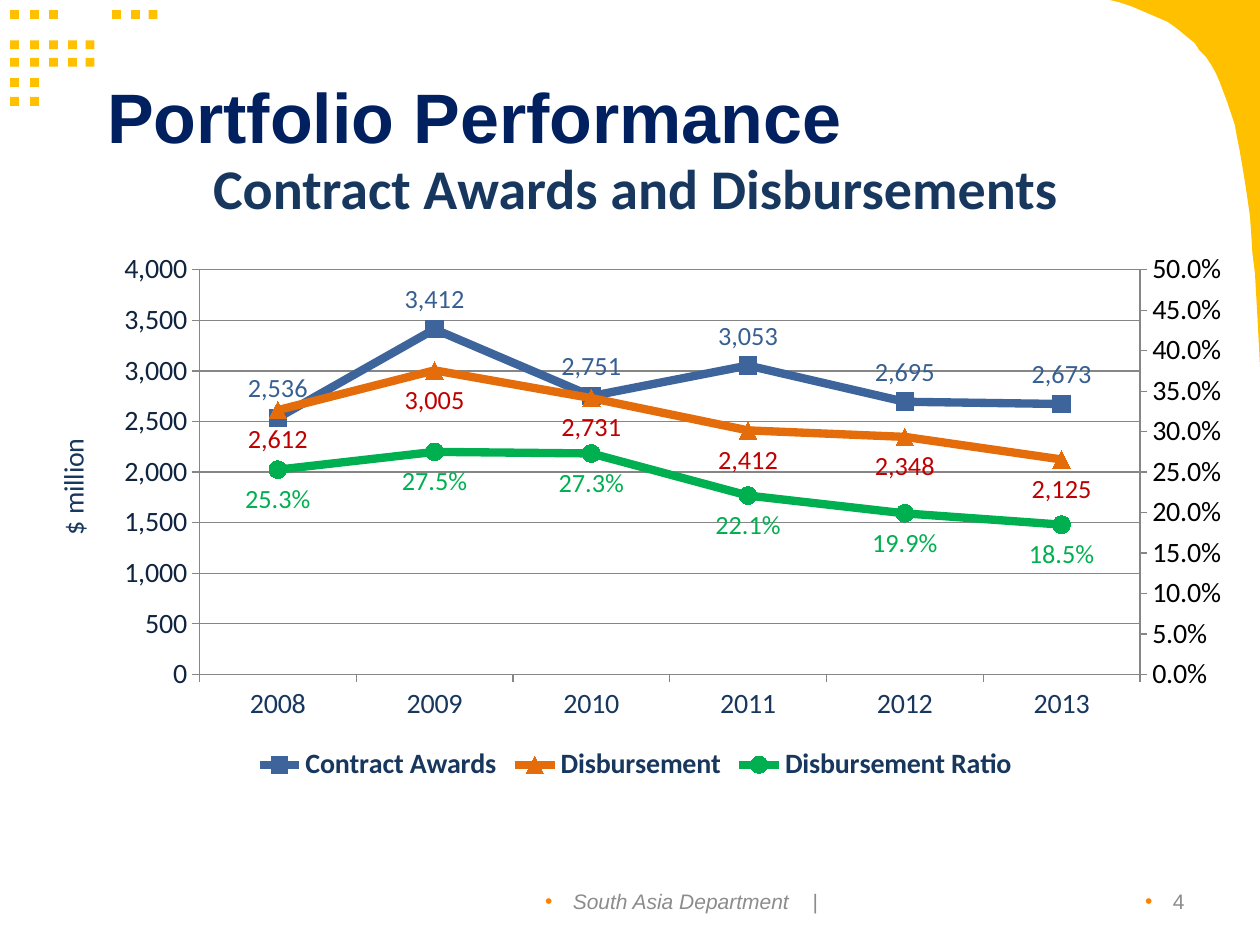
from copy import deepcopy

from pptx import Presentation
from pptx.chart.axis import CategoryAxis, ValueAxis
from pptx.chart.data import CategoryChartData
from pptx.dml.color import RGBColor
from pptx.enum.chart import (XL_CHART_TYPE as Kind, XL_LABEL_POSITION as Pos,
                             XL_LEGEND_POSITION as Side, XL_MARKER_STYLE as Mark,
                             XL_TICK_MARK as Tick)
from pptx.enum.shapes import MSO_SHAPE as Shape
from pptx.enum.text import MSO_ANCHOR as Anchor, PP_ALIGN as Align
from pptx.oxml import parse_xml
from pptx.oxml.ns import nsdecls, qn
from pptx.util import Inches, Pt

GOLD, NAVY, GREY, LINE = "FFC000", "17375E", "8C8C8C", "868686"

DOT_COLS = [0.08, 0.24, 0.39, 0.54, 0.68, 0.89, 1.04, 1.18]
DOT_ROWS = {0.08: "xxx..xxx", 0.32: "xxxxx", 0.46: "xxxxx", 0.62: "xx", 0.77: "xx"}
# The last points of the curve run from the right edge up to the top edge
CURVE = [(1.19, 0), (1.19, 2.91), (1.18, 2.71), (1.17, 2.52), (1.16, 2.34),
         (1.15, 2.17), (1.13, 2.01), (1.12, 1.85), (1.11, 1.71), (1.09, 1.57),
         (1.07, 1.44), (1.05, 1.32), (1.03, 1.2), (1.01, 1.1), (0.99, 0.99),
         (0.96, 0.9), (0.93, 0.81), (0.9, 0.73), (0.87, 0.65), (0.84, 0.58),
         (0.8, 0.51), (0.76, 0.45), (0.71, 0.4), (0.67, 0.34), (0.62, 0.3),
         (0.56, 0.25), (0.51, 0.21), (0.45, 0.17), (0.38, 0.14), (0.31, 0.11),
         (0.24, 0.08), (0.17, 0.05), (0.08, 0.02)]

YEARS = ["2008", "2009", "2010", "2011", "2012", "2013"]
# name, values, number format, line colour, label colour, marker, label place
SERIES = [
    ("Contract Awards", [2536, 3412, 2751, 3053, 2695, 2673], "#,##0",
     "3D659C", "376092", Mark.SQUARE, Pos.ABOVE),
    ("Disbursement", [2612, 3005, 2731, 2412, 2348, 2125], "#,##0",
     "E46C0A", "C00000", Mark.TRIANGLE, Pos.BELOW),
    ("Disbursement Ratio", [0.253, 0.275, 0.273, 0.221, 0.199, 0.185], "0.0%",
     "00B050", "00B050", Mark.CIRCLE, Pos.BELOW),
]


def rgb(code):
    return RGBColor.from_string(code)


def style(font, size, color, name="Calibri", bold=False, italic=False):
    font.size, font.name = Pt(size), name
    font.bold, font.italic = bold, italic
    font.color.rgb = rgb(color)


def paint(shape, color):
    shape.fill.solid()
    shape.fill.fore_color.rgb = rgb(color)
    shape.line.fill.background()
    shape.shadow.inherit = False


def dots(slide, left, top):
    for y, row in DOT_ROWS.items():
        for x, cell in zip(DOT_COLS, row):
            if cell == "x":
                paint(slide.shapes.add_shape(
                    Shape.RECTANGLE, Inches(left + x), Inches(top + y),
                    Inches(0.07), Inches(0.07)), GOLD)


def corner(slide, left, top):
    pen = slide.shapes.build_freeform(Inches(left), Inches(top))
    pen.add_line_segments([(Inches(left + x), Inches(top + y)) for x, y in CURVE])
    paint(pen.convert_to_shape(), GOLD)


def title(slide, text, left, top, width, height):
    head = slide.shapes.title
    head.left, head.top = Inches(left), Inches(top)
    head.width, head.height = Inches(width), Inches(height)
    head.text_frame.text = text
    head.text_frame.vertical_anchor = Anchor.MIDDLE
    para = head.text_frame.paragraphs[0]
    para.alignment = Align.LEFT
    style(para.font, 40, "002060", "Arial", bold=True)


def label(slide, text, left, top, width, height, align, anchor):
    box = slide.shapes.add_textbox(Inches(left), Inches(top),
                                   Inches(width), Inches(height))
    box.text_frame.word_wrap = True
    box.text_frame.vertical_anchor = anchor
    para = box.text_frame.paragraphs[0]
    para.alignment = align
    para.add_run().text = text
    return para


def footer(slide, text, left, top, width, height):
    para = label(slide, text, left, top, width, height, Align.RIGHT, Anchor.MIDDLE)
    props = para._p.get_or_add_pPr()
    props.set("marL", str(Inches(0.22)))
    props.set("indent", str(-Inches(0.22)))
    for tag in (f'<a:buClr {nsdecls("a")}><a:srgbClr val="FF8000"/></a:buClr>',
                f'<a:buFont {nsdecls("a")} typeface="Arial"/>',
                f'<a:buChar {nsdecls("a")} char="•"/>'):
        props.append(parse_xml(tag))
    style(para.runs[0].font, 12, GREY, "Arial")
    return para


def add_bar(para):
    """Close the footer with an upright bar after a wide space."""
    para.runs[0].font.italic = True
    for text in (" ", "|"):
        run = para.add_run()
        run.text = text
        style(run.font, 12, GREY, "Arial")
    para.runs[1]._r.get_or_add_rPr().set("spc", "1000")


def dress(axis, color):
    style(axis.tick_labels.font, 16, color)
    axis.format.line.color.rgb = rgb(LINE)
    axis.major_tick_mark, axis.minor_tick_mark = Tick.OUTSIDE, Tick.NONE


def split(chart):
    """Move the last series to a second pair of axes and return its value axis."""
    left = chart.plots[0]._element
    right = deepcopy(left)
    left.remove(left.findall(qn("c:ser"))[-1])
    for ser in right.findall(qn("c:ser"))[:-1]:
        right.remove(ser)
    left.addnext(right)
    cat, val = (deepcopy(ax._element) for ax in (chart.category_axis, chart.value_axis))
    chart.value_axis._element.addnext(val)
    val.addnext(cat)
    for part, ids in ((right, ("50", "60")), (cat, ("50",)), (val, ("60",))):
        for node, num in zip(part.findall(qn("c:axId")), ids):
            node.set("val", num)
    cat.find(qn("c:crossAx")).set("val", "60")
    val.find(qn("c:crossAx")).set("val", "50")
    val.find(qn("c:crosses")).set("val", "max")
    val.find(qn("c:axPos")).set("val", "r")
    CategoryAxis(cat).visible = False
    return ValueAxis(val)


def scale(axis, top, step, form):
    axis.minimum_scale, axis.maximum_scale, axis.major_unit = 0, top, step
    axis.tick_labels.number_format = form
    axis.tick_labels.number_format_is_linked = False


def graph(slide, left, top, width, height):
    data = CategoryChartData()
    data.categories = YEARS
    for name, vals, form, *_ in SERIES:
        data.add_series(name, vals, form)
    chart = slide.shapes.add_chart(Kind.LINE_MARKERS, Inches(left), Inches(top),
                                   Inches(width), Inches(height), data).chart
    style(chart.font, 10, "000000")
    chart.has_title = False

    # Lines, markers and value labels
    for ser, (_, _, form, color, ink, mark, pos) in zip(chart.plots[0].series, SERIES):
        ser.smooth = False
        ser.format.line.width = Pt(4.75)
        ser.format.line.color.rgb = rgb(color)
        ser.marker.style, ser.marker.size = mark, 10
        ser.marker.format.fill.solid()
        ser.marker.format.fill.fore_color.rgb = rgb(color)
        ser.marker.format.line.color.rgb = rgb(color)
        tags = ser.data_labels
        tags.show_value, tags.position = True, pos
        tags.number_format, tags.number_format_is_linked = form, False
        style(tags.font, 15, ink)

    # Axes
    dress(chart.category_axis, NAVY)
    axis = chart.value_axis
    dress(axis, "0F243E")
    axis.major_gridlines.format.line.color.rgb = rgb(LINE)
    scale(axis, 4000, 500, "#,##0")
    right = split(chart)
    right.has_major_gridlines = False
    dress(right, "000000")
    scale(right, 0.5, 0.05, "0.0%")
    axis.axis_title.text_frame.text = "$ million"
    style(axis.axis_title.text_frame.paragraphs[0].font, 16, NAVY)

    # Legend and plot area
    chart.has_legend = True
    chart.legend.position, chart.legend.include_in_layout = Side.BOTTOM, False
    style(chart.legend.font, 16, NAVY, bold=True)
    area = chart._chartSpace.chart.plotArea
    for old in area.findall(qn("c:layout")):
        area.remove(old)
    spots = "".join(f'<c:{key} val="{val}"/>' for key, val in (
        ("layoutTarget", "inner"), ("xMode", "edge"), ("yMode", "edge"),
        ("x", 0.142), ("y", 0.051), ("w", 0.772), ("h", 0.742)))
    area.insert(0, parse_xml(f'<c:layout {nsdecls("c")}><c:manualLayout>{spots}'
                             '</c:manualLayout></c:layout>'))


def main():
    deck = Presentation()
    deck.slide_width, deck.slide_height = Inches(10), Inches(7.5)
    slide = deck.slides.add_slide(deck.slide_layouts[5])
    dots(slide, 0, 0)
    corner(slide, 8.81, 0)
    title(slide, "Portfolio Performance", 0.75, 0.5, 9.25, 0.83)
    add_bar(footer(slide, "South Asia Department", 3.42, 6.95, 3.17, 0.4))
    footer(slide, "4", 7.17, 6.95, 2.33, 0.4)
    sub = label(slide, "Contract Awards and Disbursements",
                0.42, 1.17, 9.25, 0.83, Align.CENTER, Anchor.TOP)
    style(sub.font, 32, NAVY, bold=True)
    graph(slide, 0.21, 1.92, 9.67, 4.33)
    deck.save("out.pptx")


if __name__ == "__main__":
    main()
